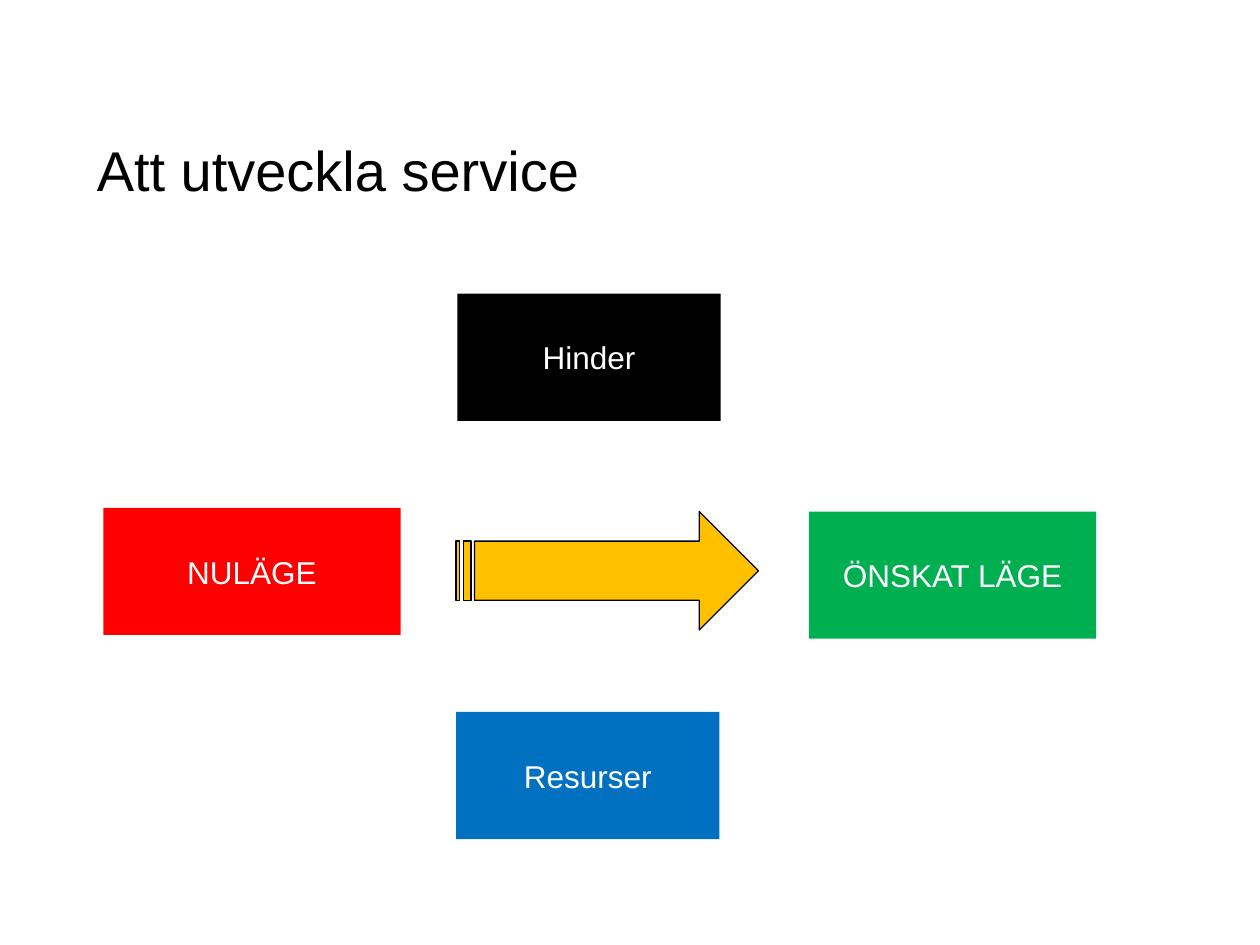
from pptx import Presentation
from pptx.dml.color import RGBColor
from pptx.enum.shapes import MSO_SHAPE
from pptx.enum.text import MSO_ANCHOR, PP_ALIGN
from pptx.util import Inches, Pt

COLORS = {
    "black": "000000",
    "white": "FFFFFF",
    "amber": "FFC000",
    "blue": "0070C0",
    "green": "00B050",
    "red": "FF0000",
}
BOX_HEIGHT = 1.01


def rgb(name):
    return RGBColor.from_string(COLORS[name])


def set_text(sp, text, size, color, align):
    tf = sp.text_frame
    tf.word_wrap = True
    tf.vertical_anchor = MSO_ANCHOR.MIDDLE
    p = tf.paragraphs[0]
    p.text = text
    p.alignment = align
    p.font.name = "Arial"
    p.font.size = Pt(size)
    p.font.color.rgb = rgb(color)


prs = Presentation()
prs.slide_width, prs.slide_height = Inches(10), Inches(7.5)
s = prs.slides.add_slide(prs.slide_layouts[6])

title = s.shapes.add_textbox(Inches(0.67), Inches(0.82), Inches(8.5), Inches(1.04))
set_text(title, "Att utveckla service", 32, "black", PP_ALIGN.LEFT)

arrow = s.shapes.add_shape(MSO_SHAPE.STRIPED_RIGHT_ARROW,
                           Inches(3.62), Inches(4.06), Inches(2.4), Inches(0.94))
arrow.shadow.inherit = False
arrow.fill.solid()
arrow.fill.fore_color.rgb = rgb("amber")
arrow.line.color.rgb = rgb("black")
arrow.line.width = Pt(0.75)

# Label, fill, left, top, width
boxes = [
    ("Hinder", "black", 3.63, 2.33, 2.09),
    ("Resurser", "blue", 3.62, 5.65, 2.09),
    ("ÖNSKAT LÄGE", "green", 6.42, 4.06, 2.28),
    ("NULÄGE", "red", 0.82, 4.03, 2.36),
]
for label, fill, left, top, width in boxes:
    sp = s.shapes.add_shape(MSO_SHAPE.RECTANGLE, Inches(left), Inches(top),
                            Inches(width), Inches(BOX_HEIGHT))
    sp.shadow.inherit = False
    sp.fill.solid()
    sp.fill.fore_color.rgb = rgb(fill)
    sp.line.fill.background()
    set_text(sp, label, 18, "white", PP_ALIGN.CENTER)

prs.save("out.pptx")
